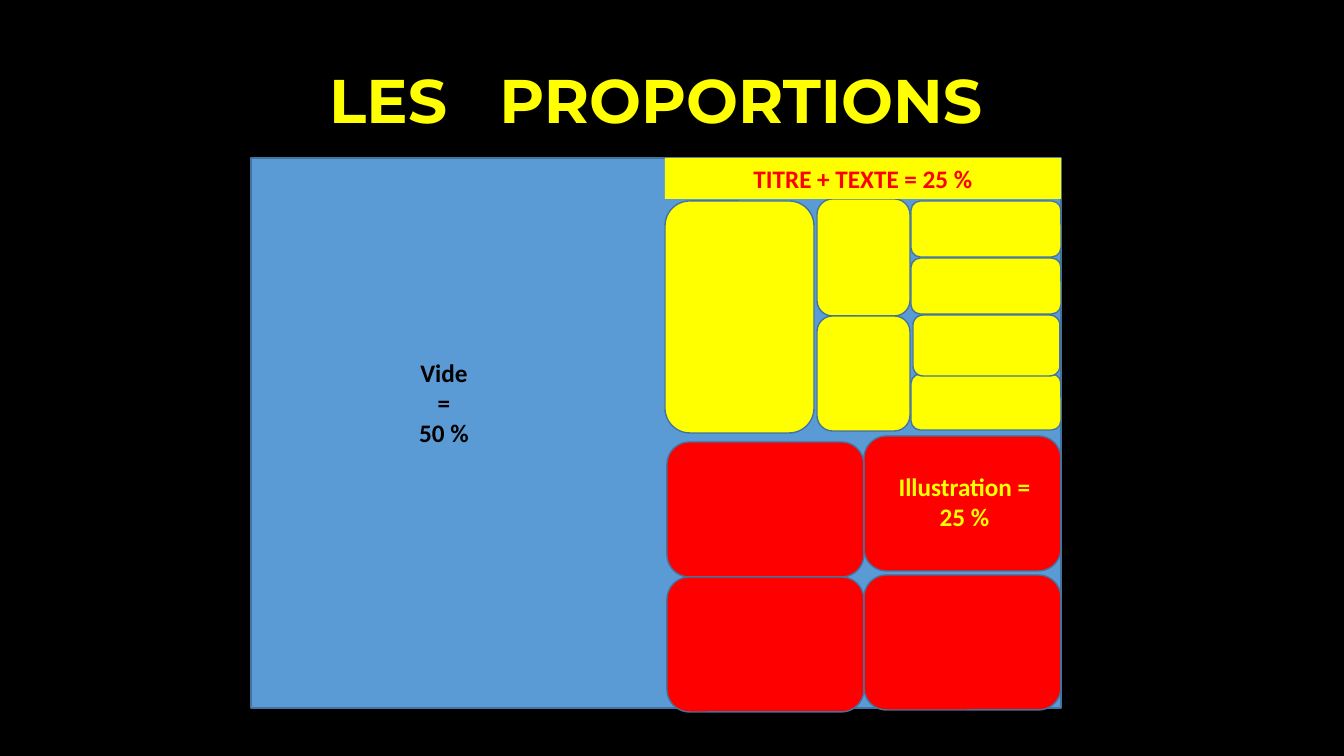
from pptx import Presentation
from pptx.dml.color import RGBColor
from pptx.enum.shapes import MSO_SHAPE as Shape
from pptx.enum.text import MSO_ANCHOR as Anchor, MSO_AUTO_SIZE as AutoSize, PP_ALIGN as Align
from pptx.util import Pt

PX = 914400 / 100.8
YELLOW, RED, BLUE, BLACK = "FFFF00", "FF0000", "5B9BD5", "000000"
OUTLINE = "43739E"


def paint(target, color):
    """Give a fill, or the fill of a line or font, a solid hex colour."""
    target.solid()
    target.fore_color.rgb = RGBColor.from_string(color)


def write(shape, text, font_name, size, color):
    """Set bold, centred, top-anchored text."""
    frame = shape.text_frame
    frame.text = text
    frame.word_wrap = True
    frame.auto_size = AutoSize.NONE
    frame.vertical_anchor = Anchor.TOP
    for paragraph in frame.paragraphs:
        paragraph.alignment = Align.CENTER
        for run in paragraph.runs:
            run.font.name = font_name
            run.font.size = Pt(size)
            run.font.bold = True
            paint(run.font.fill, color)


presentation = Presentation()
presentation.slide_width = round(1344 * PX)
presentation.slide_height = round(756 * PX)
slide = presentation.slides.add_slide(presentation.slide_layouts[5])
paint(slide.background.fill, BLACK)

title = slide.shapes.title
title.left, title.top, title.width, title.height = [round(v * PX) for v in (296, 20, 720, 122)]
write(title, "LES   PROPORTIONS", "Montserrat", 44, YELLOW)
title.text_frame.word_wrap = False
title.text_frame.paragraphs[0].line_spacing = 1.5

# Page, then the text blocks in yellow and the illustrations in red
blocks = [
    (Shape.RECTANGLE, BLUE, 251, 158, 810, 550),
    (Shape.ROUNDED_RECTANGLE, YELLOW, 817, 199, 93, 117),
    (Shape.ROUNDED_RECTANGLE, YELLOW, 665, 201, 149, 232),
    (Shape.ROUNDED_RECTANGLE, YELLOW, 817, 316, 93, 115),
]
for top in (374, 258, 201):
    blocks.append((Shape.ROUNDED_RECTANGLE, YELLOW, 911, top, 150, 56))
blocks.append((Shape.ROUNDED_RECTANGLE, YELLOW, 913, 315, 147, 61))
for left, tops in ((864, (436, 575)), (667, (442, 577))):
    for top in tops:
        blocks.append((Shape.ROUNDED_RECTANGLE, RED, left, top, 197, 135))

for kind, color, *box in blocks:
    block = slide.shapes.add_shape(kind, *[round(v * PX) for v in box])
    block.shadow.inherit = False
    paint(block.fill, color)
    paint(block.line.fill, OUTLINE)
    block.line.width = Pt(1)

labels = [
    ("TITRE + TEXTE = 25 %", RED, YELLOW, 665, 158, 396, 41),
    ("Illustration = 25 %", YELLOW, None, 886, 466, 157, 72),
    ("Vide\n=\n50 %", BLACK, None, 317, 352, 254, 132),
]
for text, color, background, *box in labels:
    label = slide.shapes.add_textbox(*[round(v * PX) for v in box])
    write(label, text, "Calibri", 18, color)
    if background:
        paint(label.fill, background)

presentation.save("out.pptx")
